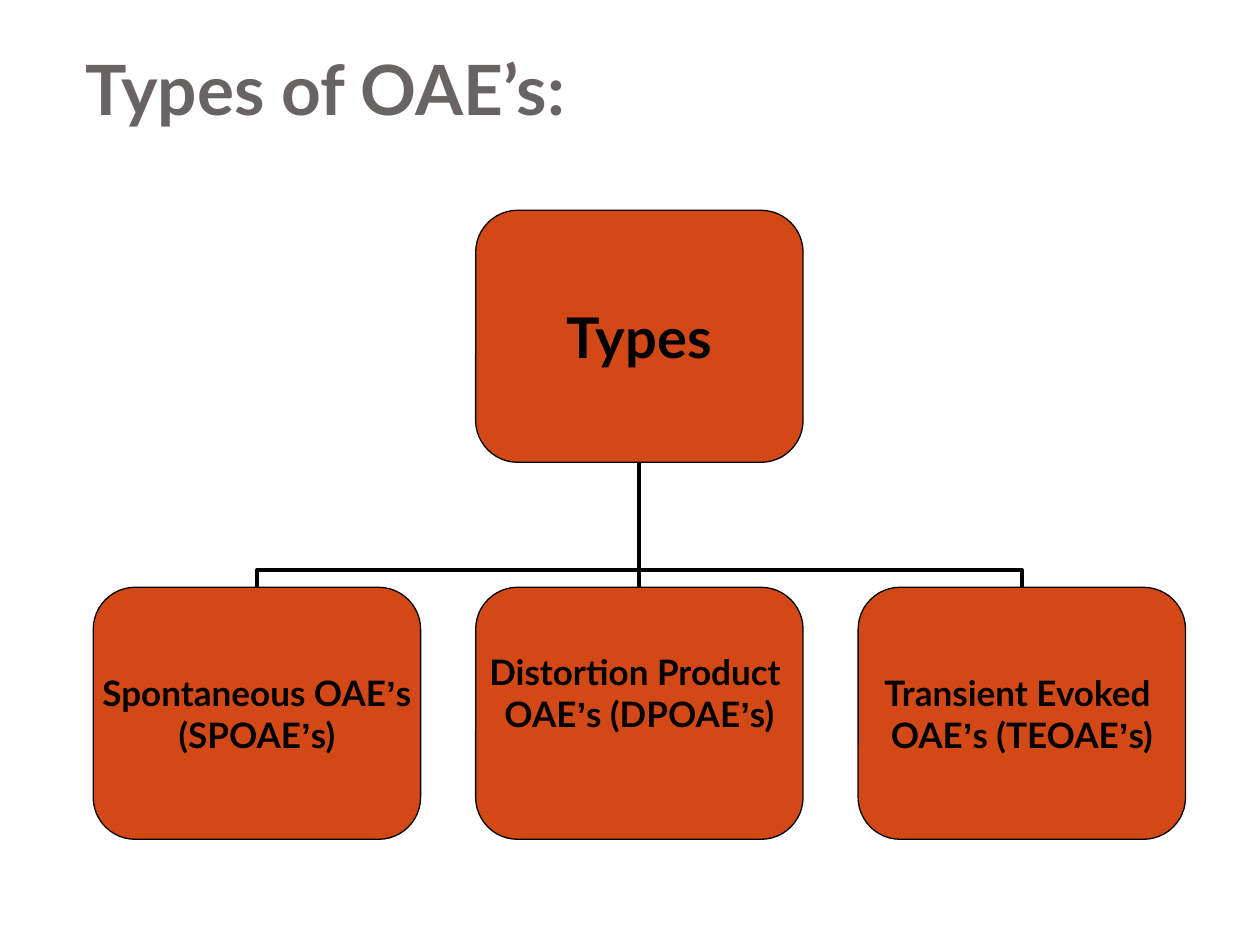
"""Build a slide with a tree of the types of OAE's."""
from itertools import groupby

from lxml.etree import SubElement
from pptx import Presentation
from pptx.dml.color import RGBColor
from pptx.enum.shapes import MSO_CONNECTOR as Link, MSO_SHAPE as Shape
from pptx.enum.text import MSO_ANCHOR as Anchor, PP_ALIGN as Align
from pptx.oxml.ns import qn
from pptx.util import Cm, Pt

COLORS = {"title": "696464", "box": "D34817", "ink": "000000"}
FONT, QUOTE_FONT = "Lato", "Arial"
BOX_WIDTH, BOX_HEIGHT = 6.6, 5.08
ROOT_TOP, CHILD_TOP = 4.24, 11.84
FIRST_CENTER, STEP = 5.18, 7.71
ROOT_CENTER = FIRST_CENTER + STEP
TEXT_LINE = 0.85
TYPES = [
    (["Spontaneous OAE’s", "(SPOAE’s)"], 0),
    (["Distortion Product ", "OAE’s (DPOAE’s)"], TEXT_LINE),
    (["Transient Evoked ", "OAE’s (TEOAE’s)"], 0),
]


def color(name):
    return RGBColor.from_string(COLORS[name])


def format_span(span, size, ink, font=FONT):
    span.font.name = font
    span.font.size = Pt(size)
    span.font.bold = True
    span.font.color.rgb = color(ink)


def set_title(page, text):
    title = page.shapes.title
    title.left, title.top, title.width, title.height = Cm(1.47), Cm(0.76), Cm(22.66), Cm(1.98)
    frame = title.text_frame
    frame.text = text
    frame.vertical_anchor = Anchor.BOTTOM
    para = frame.paragraphs[0]
    para.alignment = Align.LEFT
    format_span(para.runs[0], 39.6, "title")


def add_box(page, center, top, lines, size, bottom_inset=0):
    box = page.shapes.add_shape(Shape.ROUNDED_RECTANGLE, Cm(center - BOX_WIDTH / 2), Cm(top),
                                Cm(BOX_WIDTH), Cm(BOX_HEIGHT))
    box.shadow.inherit = False
    box.fill.solid()
    box.fill.fore_color.rgb = color("box")
    box.line.color.rgb = color("ink")
    box.line.width = Pt(0.75)
    frame = box.text_frame
    frame.word_wrap = False
    frame.vertical_anchor = Anchor.MIDDLE
    frame.margin_left = frame.margin_right = frame.margin_top = 0
    frame.margin_bottom = Cm(bottom_inset)
    frame.text = "\n".join(lines)
    for para, line in zip(frame.paragraphs, lines):
        para.alignment = Align.CENTER
        para.clear()
        for is_quote, letters in groupby(line, lambda letter: letter == "’"):
            span = para.add_run()
            span.text = "".join(letters)
            format_span(span, size, "ink", QUOTE_FONT if is_quote else FONT)


def add_link(page, kind, start_x, start_y, end_x, end_y):
    link = page.shapes.add_connector(kind, Cm(start_x), Cm(start_y), Cm(end_x), Cm(end_y))
    link.line.color.rgb = color("ink")
    link.line.width = Pt(2.25)
    SubElement(link._element.spPr, qn("a:effectLst"))
    return link


def add_branch(page, child_center):
    """Join a child's top to the root's bottom; elbows are laid sideways, then turned."""
    bottom = ROOT_TOP + BOX_HEIGHT
    offset = child_center - ROOT_CENTER
    if abs(offset) < 0.01:
        add_link(page, Link.STRAIGHT, ROOT_CENTER, CHILD_TOP, ROOT_CENTER, bottom)
        return
    side = 1 if offset > 0 else -1
    middle_x, middle_y = (child_center + ROOT_CENTER) / 2, (bottom + CHILD_TOP) / 2
    half_drop, half_span = (CHILD_TOP - bottom) / 2, abs(offset) / 2
    link = add_link(page, Link.ELBOW, middle_x + side * half_drop, middle_y - half_span,
                    middle_x - side * half_drop, middle_y + half_span)
    properties = link._element.spPr
    properties.find(qn("a:xfrm")).set("rot", str(side * 90 % 360 * 60000))
    guides = properties.find(qn("a:prstGeom")).find(qn("a:avLst"))
    SubElement(guides, qn("a:gd"), name="adj1", fmla="val 13900")


def main():
    deck = Presentation()
    deck.slide_width, deck.slide_height = Cm(25.4), Cm(19.05)
    page = deck.slides.add_slide(deck.slide_layouts[5])
    set_title(page, "Types of OAE’s:")
    centers = [FIRST_CENTER + index * STEP for index in range(len(TYPES))]
    for center in centers:
        add_branch(page, center)
    add_box(page, ROOT_CENTER, ROOT_TOP, ["Types"], 32)
    for center, (lines, inset) in zip(centers, TYPES):
        add_box(page, center, CHILD_TOP, lines, 20, inset)
    deck.save("out.pptx")


if __name__ == "__main__":
    main()
